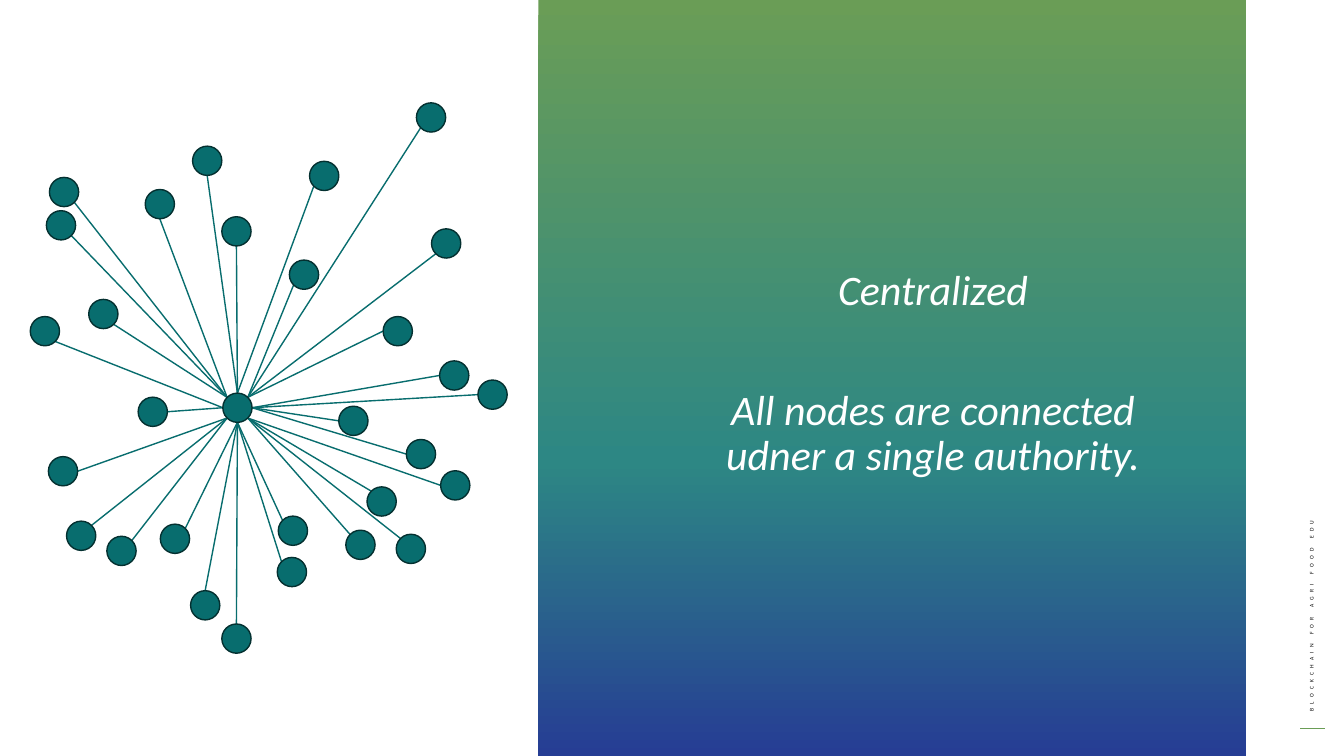
from copy import deepcopy
from math import sqrt

from pptx import Presentation
from pptx.dml.color import RGBColor
from pptx.enum.shapes import MSO_CONNECTOR, MSO_SHAPE
from pptx.enum.text import MSO_ANCHOR, MSO_AUTO_SIZE, PP_ALIGN
from pptx.oxml.ns import qn
from pptx.util import Inches, Pt

WIDTH, HEIGHT = 13.33, 7.5
TEAL, DARK_TEAL, GREEN = "086D6E", "043030", "6A9D56"


def color(hex_text):
    return RGBColor.from_string(hex_text)


def add_line(shapes, start, end, line_color, weight):
    line = shapes.add_connector(
        MSO_CONNECTOR.STRAIGHT, *[Inches(value) for value in (*start, *end)])
    line.line.color.rgb = color(line_color)
    line.line.width = Pt(weight)
    properties = line._element.spPr
    properties.append(properties.makeelement(qn("a:effectLst"), {}))


presentation = Presentation()
presentation.slide_width = Inches(WIDTH)
presentation.slide_height = Inches(HEIGHT)
slide = presentation.slides.add_slide(presentation.slide_layouts[6])

# Side label and its short rule
add_line(slide.shapes, (13.14, 7.23), (12.89, 7.23), GREEN, 0.75)
label = slide.shapes.add_textbox(
    Inches(11.54), Inches(5.6), Inches(2.94), Inches(0.17))
label.rotation = 270
label.text_frame.word_wrap = True
label.text_frame.auto_size = MSO_AUTO_SIZE.SHAPE_TO_FIT_TEXT
label.text_frame.text = "BLOCKCHAIN FOR AGRI FOOD EDU"
label_run = label.text_frame.paragraphs[0].runs[0]
label_run.font.name = "Calibri"
label_run.font.size = Pt(4)
label_run.font.color.rgb = color("010101")
label_run._r.get_or_add_rPr().set("spc", "300")

# Gradient panel, top to bottom
panel = slide.shapes.add_shape(
    MSO_SHAPE.RECTANGLE, Inches(5.34), 0, Inches(7.02), Inches(HEIGHT))
panel.shadow.inherit = False
panel.line.fill.background()
panel.fill.gradient()
panel.fill.gradient_angle = 270
stop_list = panel._element.spPr.find(".//" + qn("a:gsLst"))
stop_list.append(deepcopy(stop_list[0]))
panel_stops = [(0, GREEN), (0.61, "2D8784"), (1, "263D94")]
for stop, (position, stop_color) in zip(panel.fill.gradient_stops, panel_stops):
    stop.position = position
    stop.color.rgb = color(stop_color)

# Statement on the panel
statement = slide.shapes.add_textbox(
    Inches(6.67), Inches(0.65), Inches(5.17), Inches(6.13))
frame = statement.text_frame
frame.word_wrap = True
frame.vertical_anchor = MSO_ANCHOR.MIDDLE
frame.text = "Centralized\nAll nodes are connected udner a single authority."
for paragraph, space in zip(frame.paragraphs, (0, 53)):
    paragraph.alignment = PP_ALIGN.CENTER
    paragraph.line_spacing = 0.9
    paragraph.space_before = Pt(space)
    font = paragraph.runs[0].font
    font.name = "Calibri"
    font.size = Pt(30)
    font.italic = True
    font.color.rgb = color("FFFFFF")

# Network: one hub, each node's line joins two compass points on the circles
DIAMETER = 0.29
RADIUS = DIAMETER / 2
DIAGONAL = RADIUS / sqrt(2)
COMPASS = {
    "N": (0, -RADIUS), "S": (0, RADIUS), "W": (-RADIUS, 0), "E": (RADIUS, 0),
    "NW": (-DIAGONAL, -DIAGONAL), "NE": (DIAGONAL, -DIAGONAL),
    "SW": (-DIAGONAL, DIAGONAL), "SE": (DIAGONAL, DIAGONAL),
}
HUB = (2.21, 3.9)
# (point on hub, point on node): left and top of the nodes
SPOKES = {
    ("N", "S"): [(1.91, 1.45), (2.2, 2.15)],
    ("N", "SW"): [(3.07, 1.6)],
    ("NE", "SW"): [(2.87, 2.58), (4.13, 1.02), (4.28, 2.27)],
    ("NE", "W"): [(3.8, 3.14)],
    ("E", "W"): [(4.36, 3.58), (3.36, 4.03), (4.74, 3.77), (4.03, 4.36)],
    ("SE", "NW"): [(3.64, 4.83), (3.93, 5.3), (3.43, 5.26)],
    ("SE", "W"): [(4.37, 4.67)],
    ("S", "N"): [(2.2, 6.19), (1.89, 5.86)],
    ("S", "NW"): [(2.75, 5.53), (2.76, 5.12)],
    ("S", "NE"): [(1.59, 5.2)],
    ("SW", "NE"): [(0.66, 5.17), (1.06, 5.32)],
    ("SW", "E"): [(0.48, 4.53)],
    ("W", "E"): [(1.37, 3.94)],
    ("W", "SE"): [(0.3, 3.14)],
    ("NW", "SE"): [(0.46, 2.09), (0.88, 2.97), (0.49, 1.76)],
    ("NW", "S"): [(1.44, 1.88)],
}
network = slide.shapes.add_group_shape()
nodes = [HUB]
for sites, positions in SPOKES.items():
    for node in positions:
        start, end = [
            (left + RADIUS + COMPASS[site][0], top + RADIUS + COMPASS[site][1])
            for (left, top), site in zip((HUB, node), sites)]
        add_line(network.shapes, start, end, TEAL, 1)
        nodes.append(node)
for left, top in nodes:
    circle = network.shapes.add_shape(
        MSO_SHAPE.OVAL, Inches(left), Inches(top),
        Inches(DIAMETER), Inches(DIAMETER))
    circle.shadow.inherit = False
    circle.fill.solid()
    circle.fill.fore_color.rgb = color(TEAL)
    circle.line.color.rgb = color(DARK_TEAL)
    circle.line.width = Pt(1)

presentation.save("out.pptx")
